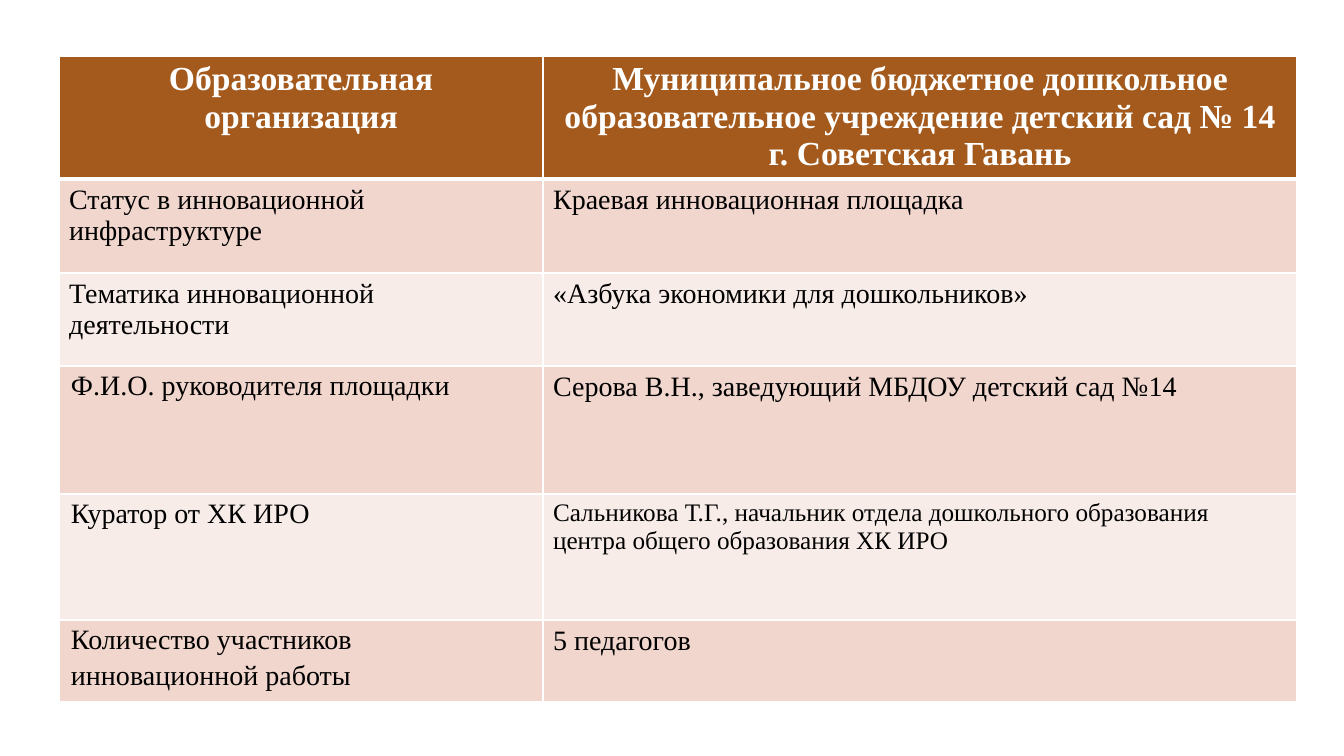
from lxml.etree import SubElement
from pptx import Presentation
from pptx.dml.color import RGBColor
from pptx.enum.text import PP_ALIGN
from pptx.oxml.ns import qn
from pptx.util import Emu, Pt

COLORS = {
    "header": "A45A1D",
    "odd_row": "F1D6CD",
    "even_row": "F8ECE8",
    "white": "FFFFFF",
    "black": "000000",
}
FONT = "Times New Roman"
COLUMN_WIDTHS = [484, 754]
ROW_HEIGHTS = [123, 94, 93, 128, 126, 82]
ROWS = [
    ("Образовательная организация",
     "Муниципальное бюджетное дошкольное образовательное учреждение детский сад № 14 г. Советская Гавань"),
    ("Статус в инновационной инфраструктуре", "Краевая инновационная площадка"),
    ("Тематика инновационной деятельности", "«Азбука экономики для дошкольников»"),
    ("Ф.И.О. руководителя площадки", "Серова В.Н., заведующий МБДОУ детский сад №14"),
    ("Куратор от ХК ИРО",
     "Сальникова Т.Г., начальник отдела дошкольного образования центра общего образования ХК ИРО"),
    ("Количество участников инновационной работы", "5 педагогов"),
]
FIRST_SPACED_ROW = 3
CURATOR_CELL = (4, 1)


def px(length):
    return Emu(round(length * 914400 / 100.8))


def set_borders(cell, top, bottom):
    """Draw white borders; top and bottom widths are in points."""
    properties = cell._tc.get_or_add_tcPr()
    for side, width in (("L", 1), ("R", 1), ("T", top), ("B", bottom)):
        line = SubElement(properties, qn(f"a:ln{side}"), w=str(Pt(width)))
        fill = SubElement(line, qn("a:solidFill"))
        SubElement(fill, qn("a:srgbClr"), val=COLORS["white"])


def fill_cell(cell, text, row, column):
    is_header = row == 0
    set_borders(cell, top=3 if row == 1 else 1, bottom=3 if is_header else 1)
    background = "header" if is_header else "odd_row" if row % 2 else "even_row"
    cell.fill.solid()
    cell.fill.fore_color.rgb = RGBColor.from_string(COLORS[background])

    cell.text = text
    paragraph = cell.text_frame.paragraphs[0]
    paragraph.alignment = PP_ALIGN.CENTER if is_header else PP_ALIGN.LEFT
    if column == 0 and row >= FIRST_SPACED_ROW:
        cell.margin_left = cell.margin_right = px(12)
        cell.margin_top = cell.margin_bottom = 0
        paragraph.line_spacing = 1.15
        paragraph.space_after = Pt(10)

    font = paragraph.font
    font.name = FONT
    font.size = Pt(24 if is_header else 18 if (row, column) == CURATOR_CELL else 20)
    font.bold = is_header
    font.color.rgb = RGBColor.from_string(COLORS["white" if is_header else "black"])


def add_organization_table(slide, left, top):
    frame = slide.shapes.add_table(
        len(ROWS), len(COLUMN_WIDTHS), px(left), px(top),
        px(sum(COLUMN_WIDTHS)), px(sum(ROW_HEIGHTS)))
    table = frame.table
    table.horz_banding = False
    for column, width in zip(table.columns, COLUMN_WIDTHS):
        column.width = px(width)
    for row, height in zip(table.rows, ROW_HEIGHTS):
        row.height = px(height)
    for row, texts in enumerate(ROWS):
        for column, text in enumerate(texts):
            fill_cell(table.cell(row, column), text, row, column)


def main():
    presentation = Presentation()
    presentation.slide_width = px(1344)
    presentation.slide_height = px(756)
    slide = presentation.slides.add_slide(presentation.slide_layouts[6])
    add_organization_table(slide, left=59, top=56)
    presentation.save("out.pptx")


if __name__ == "__main__":
    main()
